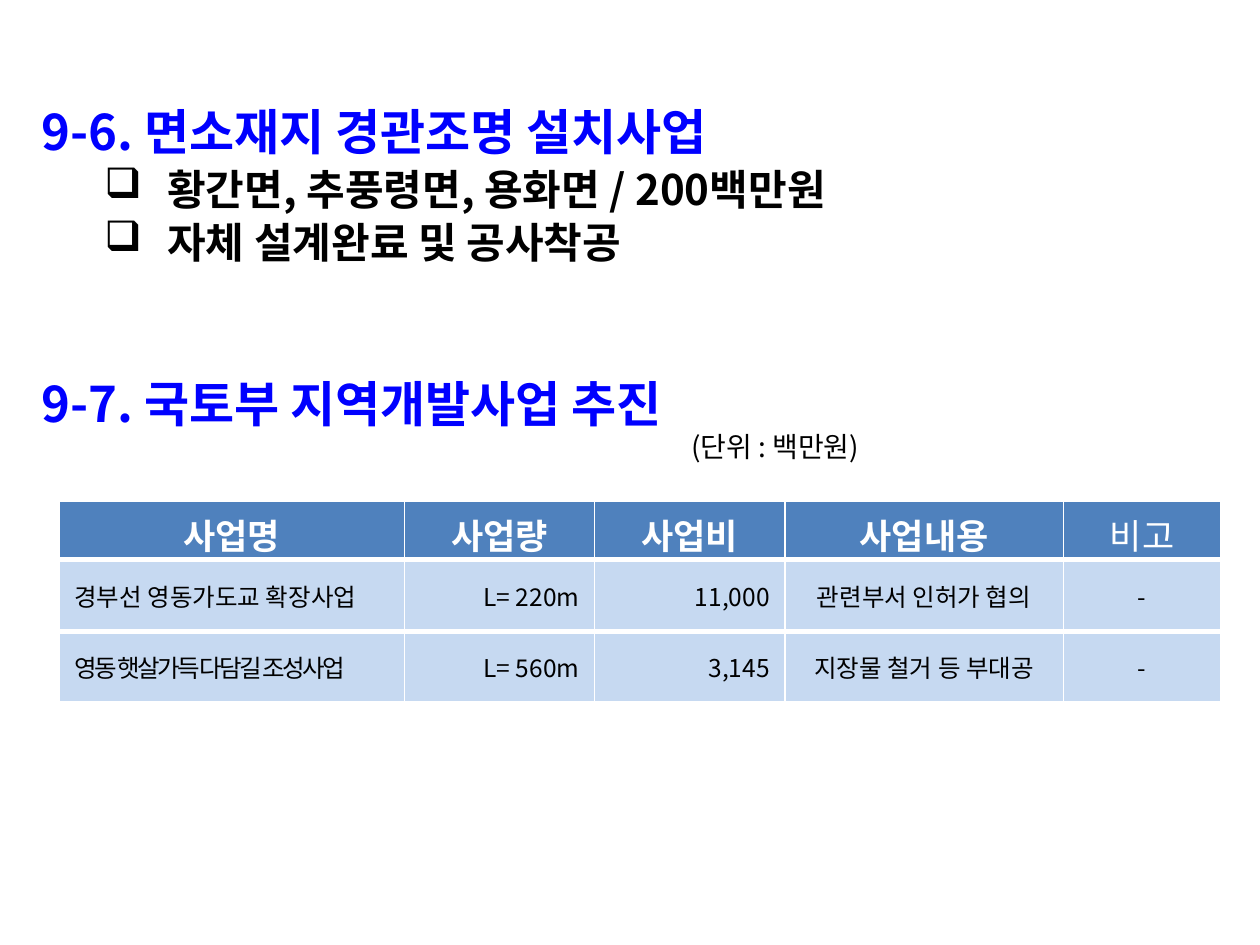
import pptx
import pptx.util
import pptx.dml.color
import pptx.enum.text
import pptx.oxml
import pptx.oxml.ns
from lxml import etree

Inches, Pt = pptx.util.Inches, pptx.util.Pt
RGBColor = pptx.dml.color.RGBColor
ALIGN = pptx.enum.text.PP_ALIGN
qn = pptx.oxml.ns.qn

FONT = "Noto Sans CJK KR"
BLUE = RGBColor(0x00, 0x00, 0xFF)
BLACK = RGBColor(0x00, 0x00, 0x00)
WHITE = RGBColor(0xFF, 0xFF, 0xFF)
HEADER_FILL = RGBColor(0x4F, 0x81, 0xBD)
BODY_FILL = RGBColor(0xC6, 0xD9, 0xF1)

HEADING = {"size": Pt(28), "bold": True, "color": BLUE}
ITEM = {"size": Pt(24), "bold": True, "color": BLACK}
UNIT = {"size": Pt(16), "bold": False, "color": BLACK}
HEADER = {"size": Pt(20), "bold": True, "color": WHITE}
BODY = {"size": Pt(14), "bold": False, "color": BLACK}

COLUMN_WIDTHS = (2.74, 1.51, 1.51, 2.21, 1.25)
ROW_HEIGHTS = (0.46, 0.57, 0.57)
BODY_ALIGNMENTS = (ALIGN.LEFT, ALIGN.RIGHT, ALIGN.RIGHT, ALIGN.CENTER, ALIGN.CENTER)
ROWS = (
    ("사업명", "사업량", "사업비", "사업내용", "비고"),
    ("경부선 영동가도교 확장사업", "L= 220m", "11,000", "관련부서 인허가 협의", "-"),
    ("영동 햇살가득 다담길 조성사업", "L= 560m", "3,145", "지장물 철거 등 부대공", "-"),
)


def write(paragraph, text, style, **layout):
    """Fill a paragraph with one run and set its paragraph layout."""
    run = paragraph.add_run()
    run.text = text
    for name, value in {"name": FONT, **style}.items():
        if name == "color":
            run.font.color.rgb = value
        else:
            setattr(run.font, name, value)
    east_asian = etree.SubElement(run.font._element, qn("a:ea"))
    east_asian.set("typeface", FONT)
    for name, value in layout.items():
        setattr(paragraph, name, value)
    return run


def indent(paragraph, left, first=0, bullet=None):
    """Set a left margin, a first-line indent and an optional bullet."""
    properties = paragraph._p.get_or_add_pPr()
    properties.set("marL", str(Inches(left)))
    properties.set("indent", str(Inches(first)))
    if bullet:
        color = etree.SubElement(properties, qn("a:buClr"))
        etree.SubElement(color, qn("a:srgbClr")).set("val", str(BLACK))
        etree.SubElement(properties, qn("a:buChar")).set("char", bullet)


def add_text_box(slide, left, top, width, height, wrap):
    shape = slide.shapes.add_textbox(*map(Inches, (left, top, width, height)))
    shape.text_frame.word_wrap = wrap
    return shape.text_frame


def add_lighting_section(slide):
    frame = add_text_box(slide, 0.23, 0.62, 9.38, 1.8, False)
    heading = frame.paragraphs[0]
    write(heading, "9-6. 면소재지 경관조명 설치사업", HEADING, line_spacing=1.3)
    indent(heading, 0.58, -0.58)
    for text in ("황간면, 추풍령면, 용화면 / 200백만원", "자체 설계완료 및 공사착공"):
        item = frame.add_paragraph()
        write(item, text, ITEM, level=1, line_spacing=1.05)
        indent(item, 1, -0.5, "❑")


def add_development_heading(slide):
    frame = add_text_box(slide, 0.23, 2.97, 9.45, 0.9, True)
    write(frame.paragraphs[0], "9-7. 국토부 지역개발사업 추진", HEADING, line_spacing=0.9)
    unit = frame.add_paragraph()
    write(unit, "(단위 : 백만원)", UNIT, line_spacing=0.8, space_before=Pt(1.5))
    indent(unit, 5.16)


def style_cell(cell, fill, margins, borders):
    cell.vertical_anchor = pptx.enum.text.MSO_ANCHOR.MIDDLE
    for side, value in margins.items():
        setattr(cell, "margin_" + side, Inches(value))
    properties = cell._tc.get_or_add_tcPr()
    for side, width in borders.items():
        line = etree.SubElement(properties, qn("a:ln" + side), w=str(Pt(width)))
        solid = etree.SubElement(line, qn("a:solidFill"))
        etree.SubElement(solid, qn("a:srgbClr")).set("val", str(WHITE))
    cell.fill.solid()
    cell.fill.fore_color.rgb = fill


def add_project_table(slide):
    table = slide.shapes.add_table(
        len(ROWS), len(COLUMN_WIDTHS), Inches(0.47), Inches(3.98),
        Inches(sum(COLUMN_WIDTHS)), Inches(sum(ROW_HEIGHTS))).table
    table.horz_banding = False
    for column, width in zip(table.columns, COLUMN_WIDTHS):
        column.width = Inches(width)
    for row, height in zip(table.rows, ROW_HEIGHTS):
        row.height = Inches(height)

    for row_index, texts in enumerate(ROWS):
        for column_index, text in enumerate(texts):
            cell = table.cell(row_index, column_index)
            paragraph = cell.text_frame.paragraphs[0]
            if row_index == 0:
                style_cell(cell, HEADER_FILL, {"top": 0.09, "bottom": 0},
                           {"L": 1, "R": 1, "T": 1, "B": 3})
                style = {**HEADER, "bold": text != "비고"}
                write(paragraph, text, style, alignment=ALIGN.CENTER, line_spacing=0.85)
            else:
                style_cell(cell, BODY_FILL, {"left": 0.12, "right": 0.12},
                           {"L": 1, "R": 1, "T": 3, "B": 3})
                write(paragraph, text, BODY, alignment=BODY_ALIGNMENTS[column_index])

    # Tighter letters keep the long project name on one line
    table.cell(2, 0).text_frame.paragraphs[0].runs[0].font._element.set("spc", "-150")


def main():
    presentation = pptx.Presentation()
    presentation.slide_width = Inches(10)
    presentation.slide_height = Inches(7.5)
    slide = presentation.slides.add_slide(presentation.slide_layouts[6])
    add_lighting_section(slide)
    add_development_heading(slide)
    add_project_table(slide)
    presentation.save("out.pptx")


if __name__ == "__main__":
    main()
